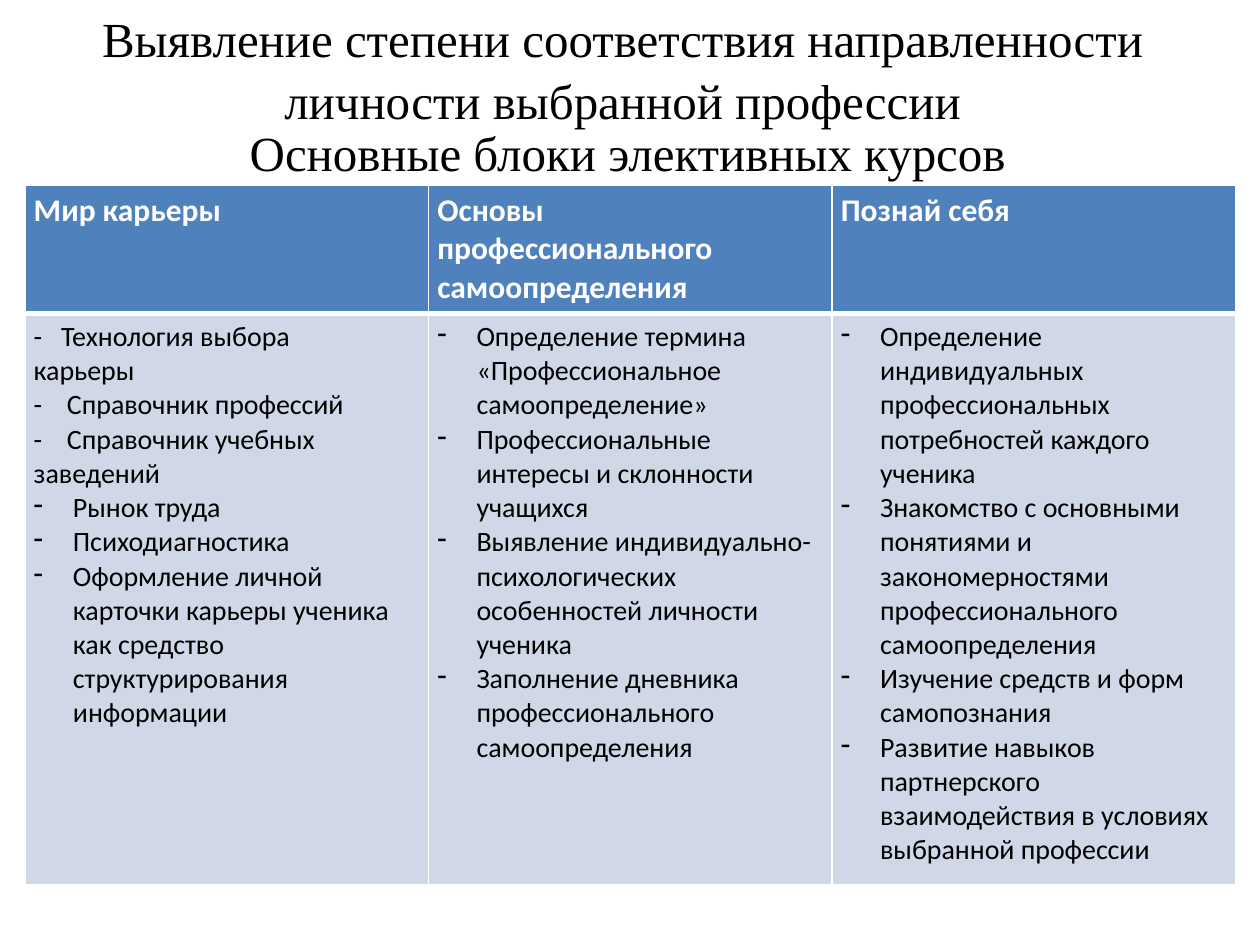
"""Builds a slide with a table of elective course blocks."""
from lxml import etree
from pptx import Presentation
from pptx import util as u
from pptx.dml.color import RGBColor
from pptx.enum import text as t
from pptx.oxml.ns import qn

TITLE = "Выявление степени соответствия направленности личности выбранной профессии"
SUBTITLE = "Основные блоки элективных курсов"
BLOCKS = [
    {
        "name": "Мир карьеры",
        "typed": [
            ("Технология выбора\vкарьеры", 0.55),
            ("Справочник профессий", 0.67),
            ("Справочник учебных заведений", 0.67),
        ],
        "items": [
            "Рынок труда",
            "Психодиагностика",
            "Оформление личной карточки карьеры ученика как средство структурирования информации",
        ],
    },
    {
        "name": "Основы профессионального самоопределения",
        "typed": [],
        "items": [
            "Определение термина «Профессиональное самоопределение»",
            "Профессиональные интересы и склонности учащихся",
            "Выявление индивидуально-психологических особенностей личности ученика",
            "Заполнение дневника профессионального самоопределения",
        ],
    },
    {
        "name": "Познай себя",
        "typed": [],
        "items": [
            "Определение индивидуальных профессиональных потребностей каждого ученика",
            "Знакомство с основными понятиями и закономерностями профессионального самоопределения",
            "Изучение средств и форм самопознания",
            "Развитие навыков партнерского взаимодействия в условиях выбранной профессии",
        ],
    },
]
THEME = {
    "title": {"font": "Times New Roman", "size": 28, "color": "000000"},
    "head": {"font": "Calibri", "size": 18, "color": "FFFFFF", "bold": True},
    "item": {"font": "Calibri", "size": 16, "color": "000000"},
    "head_fill": "4F81BD",
    "item_fill": "D0D8E8",
    "border": "FFFFFF",
}
TITLE_BOX = (0, -0.48, 25.1, 3.68)
SUBTITLE_BOX = (1.7, 2.34, 21.9, 12.09)
TABLE_BOX = (0.5, 3.73, 24.41, 13.82)
ROW_HEIGHTS = (2.31, 11.51)
INDENT = 0.79


def write(para, content, font, size, color, bold=False, align=None, spacing=None):
    """Fill a paragraph and format its text."""
    para.text = content
    para.alignment = align
    para.line_spacing = spacing
    for span in para.runs:
        span.font.name = font
        span.font.size = u.Pt(size)
        span.font.bold = bold
        span.font.color.rgb = RGBColor.from_string(color)


def set_bullet(para, mark=None, indent=0):
    """Give a paragraph a hanging mark, or none."""
    props = para._p.get_or_add_pPr()
    props.set("marL", str(u.Cm(indent)))
    props.set("indent", str(-u.Cm(indent)))
    if mark:
        etree.SubElement(props, qn("a:buChar"), char=mark)
    else:
        etree.SubElement(props, qn("a:buNone"))


def set_tab(para, position):
    """Add one left tab stop."""
    stops = etree.SubElement(para._p.get_or_add_pPr(), qn("a:tabLst"))
    etree.SubElement(stops, qn("a:tab"), pos=str(u.Cm(position)), algn="l")


def style_cell(cell, fill, bottom):
    """Set the margins, fill and borders of a cell."""
    cell.margin_left = cell.margin_right = u.Cm(0.18)
    cell.margin_top = cell.margin_bottom = u.Cm(0.13)
    cell.fill.solid()
    cell.fill.fore_color.rgb = RGBColor.from_string(fill)
    props = cell._tc.get_or_add_tcPr()
    widths = {"lnL": 1, "lnR": 1, "lnT": 1, "lnB": bottom}
    for place, (side, width) in enumerate(widths.items()):
        line = etree.Element(qn(f"a:{side}"), w=str(u.Pt(width)))
        solid = etree.SubElement(line, qn("a:solidFill"))
        etree.SubElement(solid, qn("a:srgbClr"), val=THEME["border"])
        props.insert(place, line)


def place_heading(box, content, frame, anchor, spacing=None):
    """Move a placeholder and write its centred heading."""
    box.left, box.top, box.width, box.height = map(u.Cm, frame)
    box.text_frame.vertical_anchor = anchor
    para = box.text_frame.paragraphs[0]
    write(para, content, **THEME["title"], align=t.PP_ALIGN.CENTER, spacing=spacing)
    set_bullet(para)


def fill_block(table, column, block):
    """Write one course block into its table column."""
    head, body = table.cell(0, column), table.cell(1, column)
    style_cell(head, THEME["head_fill"], 3)
    style_cell(body, THEME["item_fill"], 1)
    write(head.text_frame.paragraphs[0], block["name"], **THEME["head"])
    entries = block["typed"] + [(item, None) for item in block["items"]]
    for number, (content, stop) in enumerate(entries):
        frame = body.text_frame
        para = frame.add_paragraph() if number else frame.paragraphs[0]
        if stop:
            write(para, f"-\t{content}", **THEME["item"])
            set_tab(para, stop)
        else:
            write(para, content, **THEME["item"])
            set_bullet(para, "-", INDENT)


def main():
    """Build and save the deck."""
    deck = Presentation()
    deck.slide_width, deck.slide_height = u.Cm(25.4), u.Cm(19.05)
    page = deck.slides.add_slide(deck.slide_layouts[1])
    place_heading(page.shapes.title, TITLE, TITLE_BOX, t.MSO_ANCHOR.MIDDLE, 1.05)
    place_heading(page.placeholders[1], SUBTITLE, SUBTITLE_BOX, t.MSO_ANCHOR.TOP)
    table = page.shapes.add_table(2, len(BLOCKS), *map(u.Cm, TABLE_BOX)).table
    for row, height in zip(table.rows, ROW_HEIGHTS):
        row.height = u.Cm(height)
    for column, block in enumerate(BLOCKS):
        fill_block(table, column, block)
    deck.save("out.pptx")


if __name__ == "__main__":
    main()
